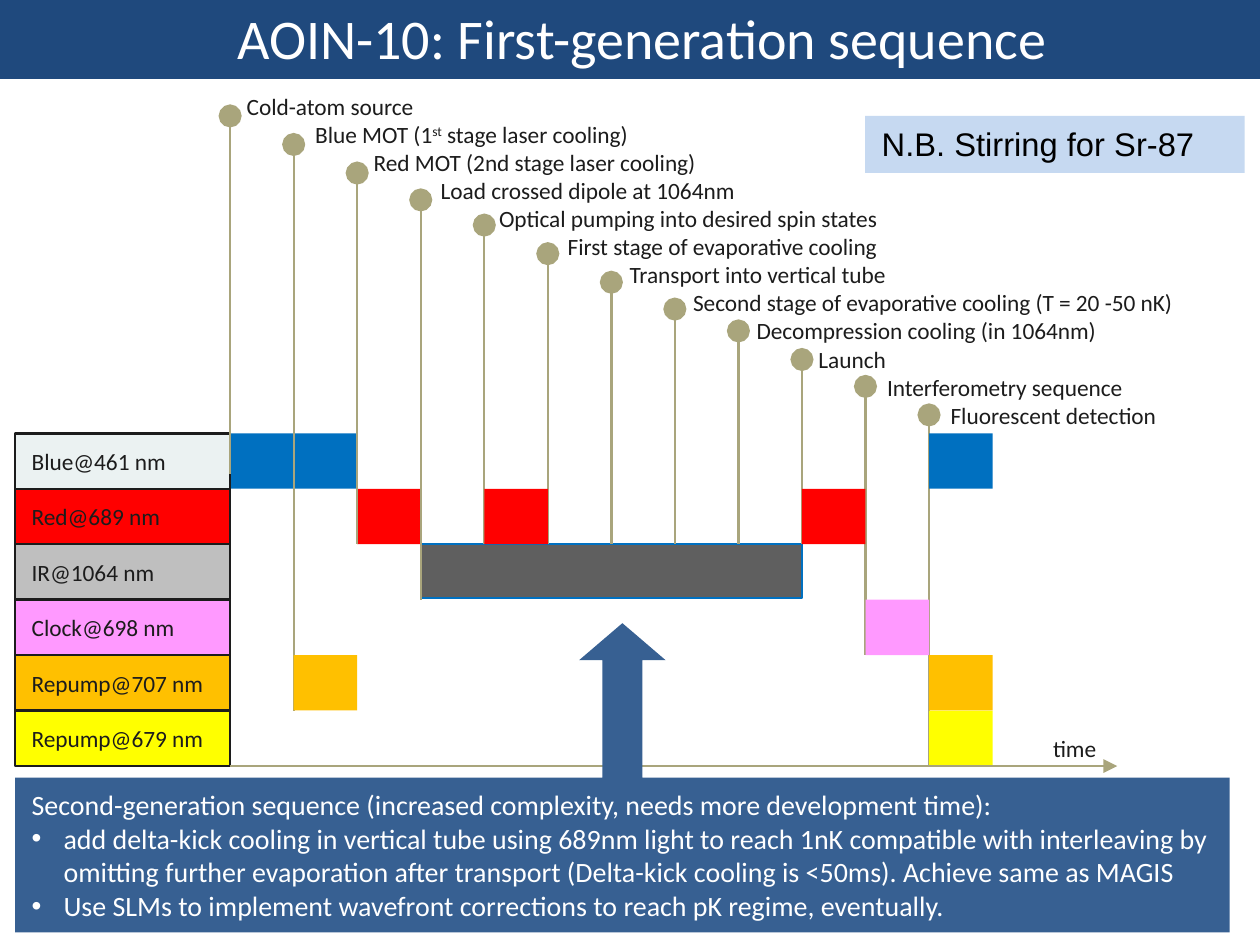
"""Build the slide with the laser timing sequence of an atom interferometer."""
from lxml import etree
from pptx import Presentation
from pptx import util as u
from pptx.dml.color import RGBColor
from pptx.enum import shapes, text
from pptx.oxml.ns import qn

WHITE, INK, STEM = "FFFFFF", "1C1C1C", "A9A57C"
BLUE, RED, PINK, ORANGE, YELLOW = "0070C0", "FF0000", "FF99FF", "FFC000", "FFFF00"
X0, Y0, COL, ROW = 1.37, 2.58, 4.16 / 11, 1.98 / 6

LASERS = [("Blue@461 nm", "EBF2F2"), ("Red@689 nm", RED), ("IR@1064 nm", "BFBFBF"),
          ("Clock@698 nm", PINK), ("Repump@707 nm", ORANGE), ("Repump@679 nm", YELLOW)]

# label, top of stem in inches, end of stem in rows, extra indent of label
STAGES = [
    (["Cold-atom source"], 0.69, 0.73, 0),
    (["Blue MOT (1", "st", " stage laser cooling)"], 0.86, 5, 0.03),
    (["Red MOT (2nd stage laser cooling)"], 1.03, 2, 0),
    (["Load crossed dipole at 1064nm"], 1.19, 3, 0.02),
    (["Optical pumping into desired spin states"], 1.34, 2, -0.01),
    (["First stage of evaporative cooling"], 1.51, 2, 0.02),
    (["Transport into vertical tube"], 1.68, 2, 0.01),
    (["Second stage of evaporative cooling (T = 20 -50 nK)"], 1.84, 2, 0.01),
    (["Decompression cooling (in 1064nm)"], 1.97, 2, 0.01),
    (["Launch"], 2.14, 2, 0),
    (["Interferometry sequence"], 2.3, 4, 0.03),
    (["Fluorescent detection"], 2.47, 6, 0.03),
]

# column, row, columns wide, fill
PULSES_BEHIND = [(0, 0, 2, BLUE), (2, 1, 1, RED)]
PULSES_FRONT = [(10, 3, 1, PINK), (9, 1, 1, RED), (11, 0, 1, BLUE), (1, 4, 1, ORANGE),
                (4, 1, 1, RED), (11, 5, 1, YELLOW), (11, 4, 1, ORANGE)]

NOTES = [
    "Second-generation sequence (increased complexity, needs more development time):",
    "add delta-kick cooling in vertical tube using 689nm light to reach 1nK compatible with "
    "interleaving by omitting further evaporation after transport (Delta-kick cooling is "
    "<50ms). Achieve same as MAGIS",
    "Use SLMs to implement wavefront corrections to reach pK regime, eventually.",
]


def rgb(value):
    """Turn a hex string into a colour."""
    return RGBColor.from_string(value)


def write(p, words, size=10, color=INK, font="Calibri", align=text.PP_ALIGN.LEFT,
          indent=0, hang=0, bullet=None, raised=False):
    """Add one formatted run to a paragraph."""
    p.alignment = align
    pPr = p._p.get_or_add_pPr()
    pPr.set("marL", str(u.Inches(indent)))
    pPr.set("indent", str(u.Inches(-hang)))
    if bullet:
        etree.SubElement(pPr, qn("a:buFont")).set("typeface", "Arial")
        etree.SubElement(pPr, qn("a:buChar")).set("char", bullet)
    r = p.add_run()
    r.text = words
    r.font.size, r.font.name, r.font.color.rgb = u.Pt(size), font, rgb(color)
    if raised:
        r.font._element.set("baseline", "30000")


class Deck:
    """Hold the style and the current slide."""

    def __init__(self, prs):
        """Add a blank slide."""
        self.s = prs.slides.add_slide(prs.slide_layouts[6])

    def shape(self, x, y, w, h, fill, line=None, kind=shapes.MSO_SHAPE.RECTANGLE,
              anchor=text.MSO_ANCHOR.TOP):
        """Add a flat preset shape."""
        sp = self.s.shapes.add_shape(kind, *map(u.Inches, (x, y, w, h)))
        sp.shadow.inherit = False
        sp.fill.solid()
        sp.fill.fore_color.rgb = rgb(fill)
        if line:
            sp.line.color.rgb, sp.line.width = rgb(line), u.Pt(1)
        else:
            sp.line.fill.background()
        sp.text_frame.vertical_anchor = anchor
        return sp

    def box(self, x, y, w, h):
        """Add a wrapping text box and return its frame."""
        tf = self.s.shapes.add_textbox(*map(u.Inches, (x, y, w, h))).text_frame
        tf.word_wrap = True
        return tf

    def line(self, x1, y1, x2, y2, end, kind, width, size):
        """Add a line with a marker at one end."""
        c = self.s.shapes.add_connector(shapes.MSO_CONNECTOR.STRAIGHT,
                                        *map(u.Inches, (x1, y1, x2, y2)))
        c.line.color.rgb, c.line.width = rgb(STEM), u.Pt(width)
        mark = etree.SubElement(c.line._get_or_add_ln(), qn(end))
        for key, value in (("type", kind), ("w", size), ("len", size)):
            mark.set(key, value)
        etree.SubElement(c._element.spPr, qn("a:effectLst"))

    def pulses(self, items):
        """Add laser pulses on the time grid."""
        for col, row, span, fill in items:
            self.shape(X0 + col * COL, Y0 + row * ROW, span * COL, ROW, fill)


def main():
    """Build and save the slide."""
    prs = Presentation()
    prs.slide_width, prs.slide_height = u.Inches(7.5), u.Inches(7.5 * 3 / 4)
    d = Deck(prs)

    title = d.shape(0, -0.03, 7.5, 0.5, "1F497D").text_frame
    title.margin_left = u.Inches(0.24)
    write(title.paragraphs[0], "AOIN-10: First-generation sequence", size=24, color=WHITE,
          align=text.PP_ALIGN.CENTER)

    tf = d.box(X0, 0.5, 6.1, 2.12)
    for i, (parts, _, _, extra) in enumerate(STAGES):
        p = tf.add_paragraph() if i else tf.paragraphs[0]
        for words in parts:
            write(p, words, indent=i * COL + extra, raised=words == "st")

    d.pulses(PULSES_BEHIND)
    d.shape(X0 + 3 * COL, Y0 + 2 * ROW, 6 * COL, 0.32, "5F5F5F", line=BLUE)
    for i, (name, fill) in enumerate(LASERS):
        sp = d.shape(0.09, Y0 + i * ROW, 1.28, ROW, fill, line=INK,
                     anchor=text.MSO_ANCHOR.MIDDLE)
        write(sp.text_frame.paragraphs[0], name)
    for i, (_, top, end, _) in enumerate(STAGES):
        x = X0 + i * COL
        d.line(x, top, x, Y0 + end * ROW, "a:headEnd", "oval", 1, "lg")
    d.pulses(PULSES_FRONT)

    axis = Y0 + len(LASERS) * ROW
    d.line(X0, axis, 6.65, axis, "a:tailEnd", "triangle", 0.5, "med")
    write(d.box(6.17, 4.32, 0.67, 0.27).paragraphs[0], "time")

    callout = d.shape(0.09, 3.71, 7.23, 1.84, "376092",
                      kind=shapes.MSO_SHAPE.UP_ARROW_CALLOUT)
    for i, value in enumerate((0.13, 0.14, 0.12, 0.5)):
        callout.adjustments[i] = value
    tf = d.box(0.09, 4.64, 7.23, 0.91)
    for i, words in enumerate(NOTES):
        p = tf.add_paragraph() if i else tf.paragraphs[0]
        hang = 0.19 if i else 0
        write(p, words, size=12, color=WHITE, indent=hang, hang=hang,
              bullet="•" if i else None)

    remark = d.shape(5.15, 0.69, 2.26, 0.34, "C6D9F1").text_frame
    write(remark.paragraphs[0], "N.B. Stirring for Sr-87", size=14, color="000000", font="Arial")
    prs.save("out.pptx")


if __name__ == "__main__":
    main()
